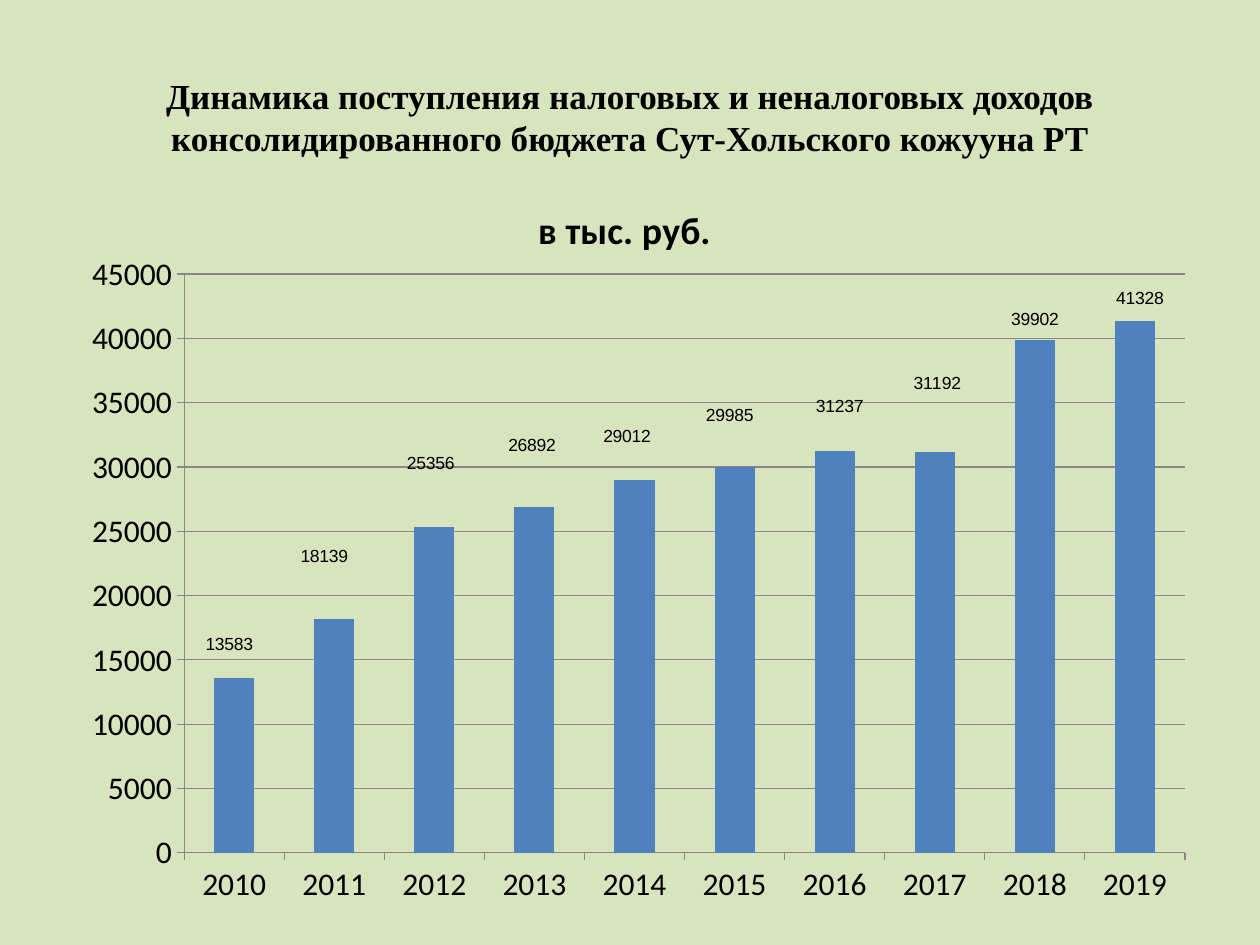
from dataclasses import dataclass

from lxml import etree
from pptx import Presentation
from pptx import util as u
from pptx.chart.data import CategoryChartData
from pptx.dml.color import RGBColor
from pptx.enum import chart as ch, text
from pptx.oxml.ns import qn


@dataclass(frozen=True)
class Theme:
    back: RGBColor = RGBColor(0xD7, 0xE4, 0xBD)
    ink: RGBColor = RGBColor(0, 0, 0)
    bar: RGBColor = RGBColor(0x4F, 0x81, 0xBD)
    rule: RGBColor = RGBColor(0x87, 0x87, 0x87)
    head: float = 20
    body: float = 18
    name: float = 21.6
    small: float = 10


class Deck:
    """Holds the theme and the current slide, and adds elements to it."""

    def __init__(self, pres, theme):
        self.theme = theme
        self.slide = pres.slides.add_slide(pres.slide_layouts[6])
        fill = self.slide.background.fill
        fill.solid()
        fill.fore_color.rgb = theme.back

    def style(self, font, face, size, bold=False):
        font.name, font.size, font.bold = face, u.Pt(size), bold
        font.color.rgb = self.theme.ink

    def title(self, words, box):
        frame = self.slide.shapes.add_textbox(*map(u.Inches, box)).text_frame
        frame.word_wrap = True
        frame.vertical_anchor = text.MSO_ANCHOR.MIDDLE
        para = frame.paragraphs[0]
        para.alignment = text.PP_ALIGN.CENTER
        run = para.add_run()
        run.text = words
        self.style(run.font, "Times New Roman", self.theme.head, True)

    def line(self, form):
        form.line.color.rgb = self.theme.rule
        form.line.width = u.Pt(0.75)

    def layout(self, parent, index, **parts):
        outer = etree.Element(qn("c:layout"))
        inner = etree.SubElement(outer, qn("c:manualLayout"))
        for tag, value in parts.items():
            etree.SubElement(inner, qn(f"c:{tag}")).set("val", str(value))
        for old in parent.findall(qn("c:layout")):
            parent.remove(old)
        parent.insert(index, outer)

    def columns(self, name, data, box, plot, top, step, shifts):
        source = CategoryChartData()
        source.categories = list(data)
        source.add_series(name, list(data.values()))
        chart = self.slide.shapes.add_chart(
            ch.XL_CHART_TYPE.COLUMN_STACKED, *map(u.Inches, box), source).chart
        self.style(chart.font, "Calibri", self.theme.body)
        chart.has_legend = False
        chart.has_title = True
        run = chart.chart_title.text_frame.paragraphs[0].add_run()
        run.text = name
        self.style(run.font, "Calibri", self.theme.name, True)

        for axis in (chart.category_axis, chart.value_axis):
            axis.major_tick_mark = ch.XL_TICK_MARK.OUTSIDE
            axis.minor_tick_mark = ch.XL_TICK_MARK.NONE
            self.line(axis.format)
        scale = chart.value_axis
        scale.minimum_scale, scale.maximum_scale = 0, top
        scale.major_unit = step
        scale.has_major_gridlines = True
        self.line(scale.major_gridlines.format)

        bars = chart.plots[0]
        bars.gap_width, bars.overlap = 150, 100
        bars.vary_by_categories = False
        series = bars.series[0]
        series.format.fill.solid()
        series.format.fill.fore_color.rgb = self.theme.bar

        area = chart.element.find(".//" + qn("c:plotArea"))
        left, high, wide, tall = plot
        self.layout(area, 0, layoutTarget="inner", xMode="edge", yMode="edge",
                    x=left, y=high, w=wide, h=tall)
        self.labels(series, data.values(), shifts, box[2:], tall / top)

    def labels(self, series, values, shifts, size, unit):
        wide, tall = size
        series.data_labels.show_value = True
        for i, _ in enumerate(values):
            self.style(series.points[i].data_label.font, "Arial", self.theme.small)
        group = series.data_labels._element
        for lead in group.findall(qn("c:showLeaderLines")):
            lead.set("val", "0")
        for label, value, (side, lift) in zip(
                group.findall(qn("c:dLbl")), values, shifts):
            self.layout(label, 1, x=side / wide,
                        y=-lift / tall - value * unit / 2)


def main():
    pres = Presentation()
    pres.slide_width, pres.slide_height = u.Inches(10), u.Inches(7.5)
    deck = Deck(pres, Theme())
    deck.title("Динамика поступления налоговых и неналоговых доходов "
               "консолидированного бюджета Сут-Хольского кожууна РТ",
               (0.5, 0.3, 9, 1.25))
    sums = (13583, 18139, 25356, 26892, 29012,
            29985, 31237, 31192, 39902, 41328)
    data = {str(2010 + i): value for i, value in enumerate(sums)}
    shifts = ((-0.04, 0.27), (-0.08, 0.5), (-0.03, 0.5), (-0.02, 0.49),
              (-0.06, 0.34), (-0.04, 0.41), (0.04, 0.35), (0.02, 0.54),
              (0, 0.16), (0.04, 0.18))
    deck.columns("в тыс. руб.", data, (0.51, 1.39, 8.9, 5.86),
                 (0.107, 0.134, 0.893, 0.784), 45000, 5000, shifts)
    pres.save("out.pptx")


if __name__ == "__main__":
    main()
